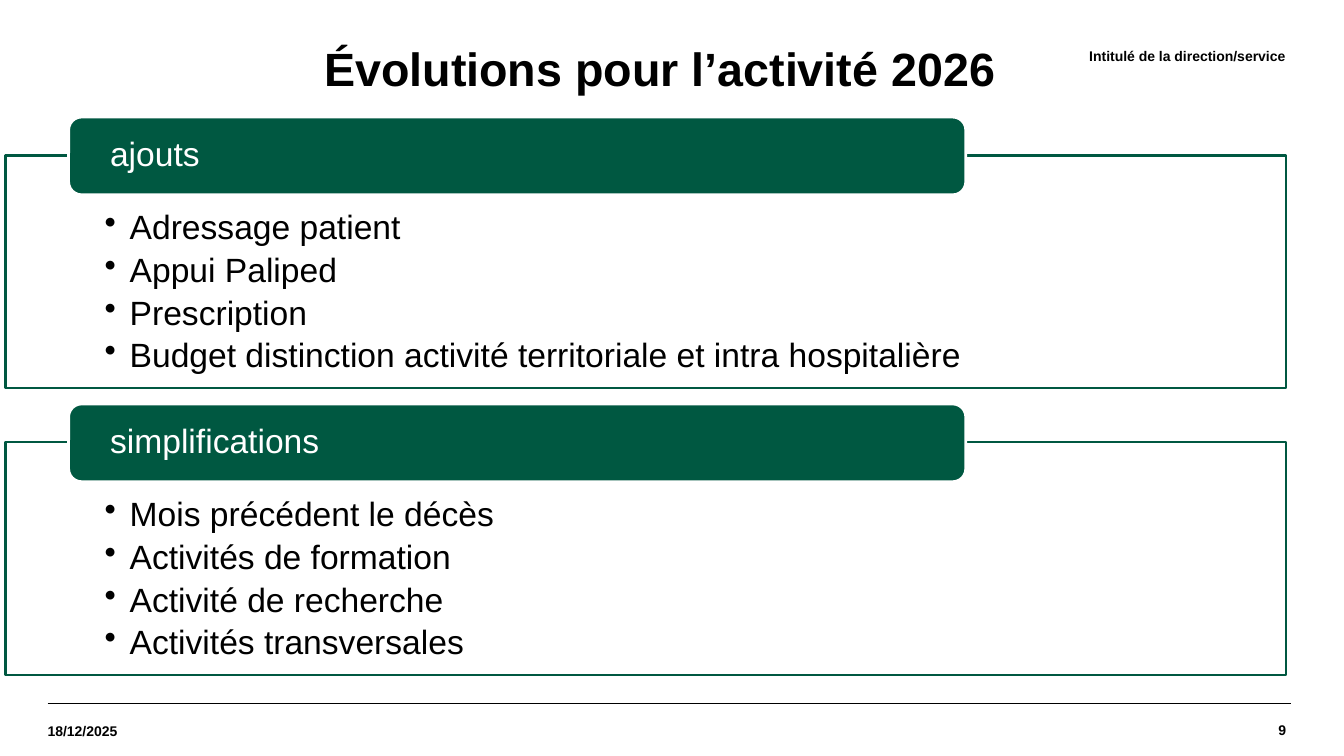
from dataclasses import dataclass

from lxml import etree
from pptx import Presentation
from pptx.dml.color import RGBColor
from pptx.enum import shapes, text
from pptx.oxml import ns
from pptx.util import Cm, Pt

TITLE = "Évolutions pour l’activité 2026"
DEPARTMENT = "Intitulé de la direction/service"
DATE = "18/12/2025"
PAGE_NUMBER = "9"
SECTIONS = [
    ("ajouts", [
        "Adressage patient",
        "Appui Paliped",
        "Prescription",
        "Budget distinction activité territoriale et intra hospitalière",
    ]),
    ("simplifications", [
        "Mois précédent le décès",
        "Activités de formation",
        "Activité de recherche",
        "Activités transversales",
    ]),
]


@dataclass(frozen=True)
class Theme:
    font: str = "Arial"
    green: RGBColor = RGBColor(0x00, 0x58, 0x41)
    white: RGBColor = RGBColor(0xFF, 0xFF, 0xFF)
    black: RGBColor = RGBColor(0x00, 0x00, 0x00)
    title_size: float = 33.3
    body_size: float = 24
    small_size: float = 10
    border: float = 2
    rule: float = 0.8


THEME = Theme()
LEFT, RIGHT = text.PP_ALIGN.LEFT, text.PP_ALIGN.RIGHT
TOP, MIDDLE = text.MSO_ANCHOR.TOP, text.MSO_ANCHOR.MIDDLE

# Section geometry, in centimetres
FIRST_TAB_TOP = 2.95
SECTION_PITCH = 7.23
FRAME_LEFT, FRAME_WIDTH, FRAME_HEIGHT = 0.13, 32.28, 5.87
FRAME_OFFSET = 0.96
TAB_LEFT, TAB_WIDTH, TAB_HEIGHT = 1.73, 22.61, 1.96


def write(box, lines, size, color, bold=False, align=LEFT, anchor=MIDDLE,
          margins=(0, 0, 0, 0), spacing=1.0, bulleted=False):
    """Fill a shape with one paragraph per line; margins run left, top, right, bottom."""
    frame = box.text_frame
    frame.word_wrap = True
    frame.vertical_anchor = anchor
    (frame.margin_left, frame.margin_top,
     frame.margin_right, frame.margin_bottom) = map(Cm, margins)
    frame.text = "\n".join(lines)
    for para in frame.paragraphs:
        if bulleted:
            add_bullet(para)
            para.space_after = Pt(4.6)
        para.alignment = align
        para.line_spacing = spacing
        for span in para.runs:
            span.font.name = THEME.font
            span.font.size = Pt(size)
            span.font.bold = bold
            span.font.color.rgb = color


def add_bullet(para):
    properties = para._p.get_or_add_pPr()
    properties.set("marL", str(Cm(0.63)))
    properties.set("indent", str(-Cm(0.63)))
    bullet = etree.SubElement(properties, ns.qn("a:buChar"))
    bullet.set("char", "•")


def add_label(page, place, words, size=THEME.small_size, **style):
    box = page.shapes.add_textbox(*map(Cm, place))
    write(box, [words], size, THEME.black, bold=True, **style)


def add_panel(page, preset, place, fill, border):
    panel = page.shapes.add_shape(preset, *map(Cm, place))
    panel.shadow.inherit = False
    panel.fill.solid()
    panel.fill.fore_color.rgb = fill
    panel.line.color.rgb = border
    panel.line.width = Pt(THEME.border)
    return panel


def add_section(page, tab_top, heading, items):
    """Draw a bordered list with its heading tab across the top edge."""
    frame = add_panel(
        page, shapes.MSO_SHAPE.RECTANGLE,
        (FRAME_LEFT, tab_top + FRAME_OFFSET, FRAME_WIDTH, FRAME_HEIGHT),
        THEME.white, THEME.green)
    write(frame, items, THEME.body_size, THEME.black, anchor=TOP,
          margins=(2.51, 1.4, 2.51, 0.48), spacing=0.9, bulleted=True)
    tab = add_panel(
        page, shapes.MSO_SHAPE.ROUNDED_RECTANGLE,
        (TAB_LEFT, tab_top, TAB_WIDTH, TAB_HEIGHT),
        THEME.green, THEME.white)
    write(tab, [heading], THEME.body_size, THEME.white,
          margins=(0.95, 0, 0.95, 0), spacing=0.9)


def add_footer_rule(page):
    rule = page.shapes.add_connector(
        shapes.MSO_CONNECTOR.STRAIGHT, Cm(1.2), Cm(17.73), Cm(32.54), Cm(17.73))
    rule.line.color.rgb = THEME.black
    rule.line.width = Pt(THEME.rule)
    etree.SubElement(rule._element.spPr, ns.qn("a:effectLst"))


def main():
    deck = Presentation()
    deck.slide_width, deck.slide_height = Cm(33.87), Cm(19.05)
    page = deck.slides.add_slide(deck.slide_layouts[6])

    add_footer_rule(page)
    add_label(page, (27.41, 17.73, 5, 1.32), PAGE_NUMBER, align=RIGHT)
    add_label(page, (1.2, 17.78, 4.34, 1.27), DATE)
    add_label(page, (7.87, 0.81, 19.3, 2), TITLE, THEME.title_size,
              margins=(0.3, 0.13, 0.25, 0.13), spacing=0.9)
    add_label(page, (10.62, 0.74, 21.77, 1.32), DEPARTMENT, align=RIGHT)
    for index, (heading, items) in enumerate(SECTIONS):
        add_section(page, FIRST_TAB_TOP + index * SECTION_PITCH, heading, items)

    deck.save("out.pptx")


if __name__ == "__main__":
    main()
